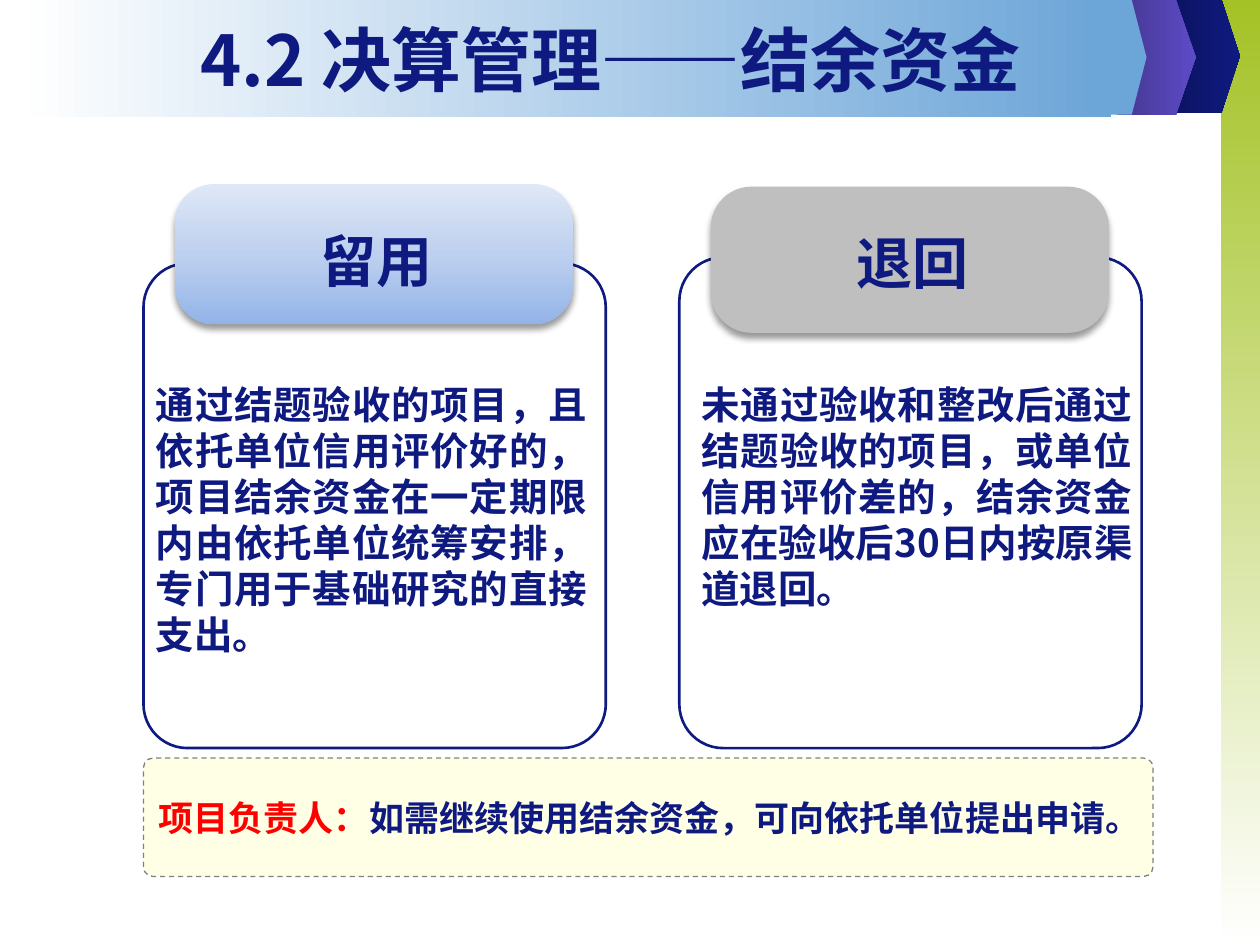
from copy import deepcopy

from lxml.etree import SubElement
from pptx import Presentation
from pptx.dml.color import RGBColor
from pptx.enum.dml import MSO_LINE
from pptx.enum.shapes import MSO_SHAPE
from pptx.enum.text import MSO_ANCHOR, MSO_AUTO_SIZE, PP_ALIGN
from pptx.oxml import parse_xml
from pptx.oxml.ns import nsdecls, qn
from pptx.util import Pt

FONT = "Noto Sans CJK SC"
NAVY = RGBColor(0x0F, 0x1A, 0x81)
DARK_NAVY = RGBColor(0x0B, 0x13, 0x5C)
PURPLE = RGBColor(0x5D, 0x4B, 0xC7)
DARK_PURPLE = RGBColor(0x43, 0x36, 0x8E)
BLUE = RGBColor(0x6C, 0xA5, 0xD8)
GREEN = RGBColor(0xA4, 0xC2, 0x26)
WHITE = RGBColor(0xFF, 0xFF, 0xFF)
GREY = RGBColor(0xBF, 0xBF, 0xBF)
DASH_GREY = RGBColor(0x80, 0x80, 0x80)
CREAM = RGBColor(0xFF, 0xFF, 0xCC)
RED = RGBColor(0xFF, 0, 0)
HEADER_BLUES = [RGBColor(0xDF, 0xE8, 0xF6), RGBColor(0xBE, 0xD0, 0xEF),
                RGBColor(0x93, 0xB4, 0xE8)]

RIGHT, DOWN = 0, 270  # gradient directions


def place(sp, box):
    sp.left, sp.top, sp.width, sp.height = map(Pt, box)


def set_gradient(fill, sp, colours, angle):
    """Spread the colours evenly along the gradient."""
    fill.gradient()
    fill.gradient_angle = angle
    stops = sp._element.spPr.find(qn("a:gradFill")).find(qn("a:gsLst"))
    for _ in colours[2:]:
        stops.append(deepcopy(stops[-1]))
    for i, (stop, colour) in enumerate(zip(fill.gradient_stops, colours)):
        stop.color.rgb = colour
        stop.position = i / (len(colours) - 1)


def add_panel(s, kind, box, colours=(), angle=RIGHT, adj=None):
    """Preset shape without outline: no fill, one colour or a gradient."""
    sp = s.shapes.add_shape(kind, *map(Pt, box))
    sp.shadow.inherit = False
    sp.line.fill.background()
    if adj is not None:
        sp.adjustments[0] = adj
    if len(colours) > 1:
        set_gradient(sp.fill, sp, colours, angle)
    elif colours:
        sp.fill.solid()
        sp.fill.fore_color.rgb = colours[0]
    else:
        sp.fill.background()
    return sp


def format_paragraph(p, size, align):
    p.alignment = align
    p.font.name, p.font.size, p.font.bold = FONT, Pt(size), True
    p.font.color.rgb = NAVY
    SubElement(p.font._element, qn("a:ea")).set("typeface", FONT)


def add_text(s, box, text, size, align):
    """Text box with tight lines; the top inset grows with the type size."""
    tf = s.shapes.add_textbox(*map(Pt, box)).text_frame
    tf.word_wrap = True
    tf.margin_top = Pt(3.6 + size / 10)
    p = tf.paragraphs[0]
    p.text = text
    format_paragraph(p, size, align)
    p.line_spacing = Pt(size * 1.2)


def add_soft_shadow(sp):
    effects = sp._element.spPr.find(qn("a:effectLst"))
    effects.append(parse_xml(
        f'<a:outerShdw {nsdecls("a")} blurRad="50800" dist="38100" '
        'dir="5400000" algn="t" rotWithShape="0"><a:srgbClr val="000000">'
        '<a:alpha val="40000"/></a:srgbClr></a:outerShdw>'))


def add_decoration(s):
    add_panel(s, MSO_SHAPE.RECTANGLE, (697.7, 0, 22.3, 540), [GREEN, WHITE], DOWN)
    arrows = [((666, -0.7, 42.5, 65.5), [DARK_NAVY, NAVY]),
              ((638, 0, 45.3, 65.5), [DARK_PURPLE, PURPLE])]
    for box, colours in arrows:
        add_panel(s, MSO_SHAPE.PENTAGON, box, colours, adj=0.25)
    add_panel(s, MSO_SHAPE.RECTANGLE, (8.6, 0, 626.4, 67), [WHITE, BLUE])
    add_panel(s, MSO_SHAPE.PENTAGON, (621.4, 0, 33.8, 65.5), [BLUE], adj=0.25)


def add_title(s, text):
    title = s.shapes.title
    s.shapes._spTree.append(title._element)  # in front of the banner
    place(title, (48.2, 9.4, 601.2, 48.2))
    tf = title.text_frame
    tf.text = text
    tf.auto_size = MSO_AUTO_SIZE.NONE
    tf.vertical_anchor = MSO_ANCHOR.MIDDLE
    format_paragraph(tf.paragraphs[0], 40, PP_ALIGN.CENTER)


def add_card(s, left, top, head_top, head_height, colours, heading, body, body_left):
    frame = add_panel(s, MSO_SHAPE.ROUNDED_RECTANGLE,
                      (left, top, 264.2, 427.5 - top), adj=0.095)
    frame.line.color.rgb = NAVY
    frame.line.width = Pt(1.5)
    head = (left + 18, head_top, 227.5, head_height)
    add_soft_shadow(add_panel(s, MSO_SHAPE.ROUNDED_RECTANGLE, head,
                              colours, DOWN, adj=0.279))
    add_text(s, (left + 55, head_top + 17.2, 156, 46.5), heading, 32, PP_ALIGN.CENTER)
    add_text(s, (body_left, 211.7, 260.6, 161), body, 22, PP_ALIGN.JUSTIFY)


def add_note(s, label, text):
    sp = add_panel(s, MSO_SHAPE.ROUNDED_RECTANGLE, (82, 433.2, 576.9, 67.7),
                   [CREAM], adj=0.081)
    colour = sp._element.spPr.find(qn("a:solidFill"))[0]
    SubElement(colour, qn("a:alpha")).set("val", "50000")
    sp.line.color.rgb = DASH_GREY
    sp.line.width = Pt(0.75)
    sp.line.dash_style = MSO_LINE.DASH
    tf = sp.text_frame
    tf.word_wrap = False
    tf.vertical_anchor = MSO_ANCHOR.MIDDLE
    p = tf.paragraphs[0]
    format_paragraph(p, 20, PP_ALIGN.JUSTIFY)
    for words, shade in ((label, RED), (text, NAVY)):
        r = p.add_run()
        r.text = words
        r.font.color.rgb = shade


def main():
    prs = Presentation()
    prs.slide_width, prs.slide_height = Pt(720), Pt(540)
    s = prs.slides.add_slide(prs.slide_layouts[5])

    # Banner and title
    add_decoration(s)
    add_title(s, "4.2 决算管理——结余资金")

    # Two outcomes for the remaining funds
    add_card(s, 82, 150.5, 105.2, 80, HEADER_BLUES, "留用",
             "通过结题验收的项目，且依托单位信用评价好的，项目结余资金在一定期限内"
             "由依托单位统筹安排，专门用于基础研究的直接支出。", 82)
    add_card(s, 388.2, 147, 106.7, 83.5, [GREY], "退回",
             "未通过验收和整改后通过结题验收的项目，或单位信用评价差的，"
             "结余资金应在验收后30日内按原渠道退回。", 393.8)

    # Note for the project leader
    add_note(s, "项目负责人：", "如需继续使用结余资金，可向依托单位提出申请。")
    prs.save("out.pptx")


if __name__ == "__main__":
    main()
